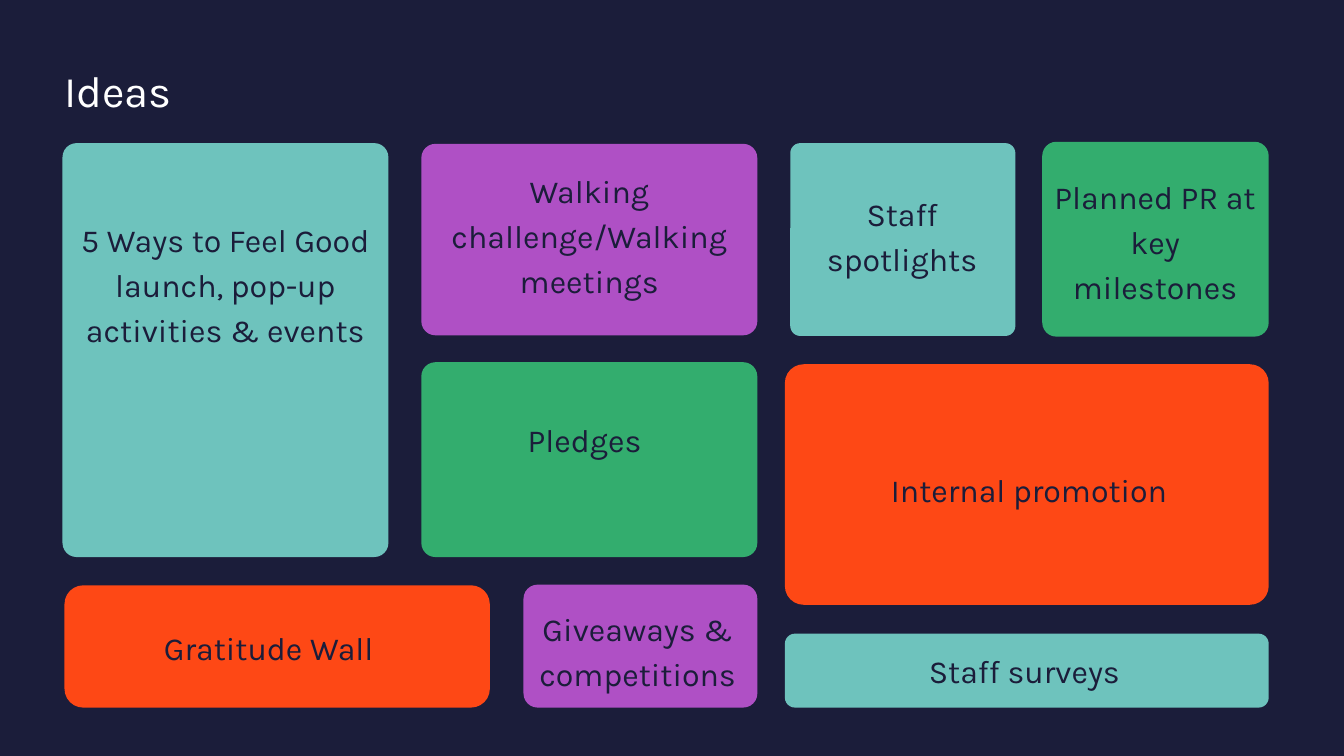
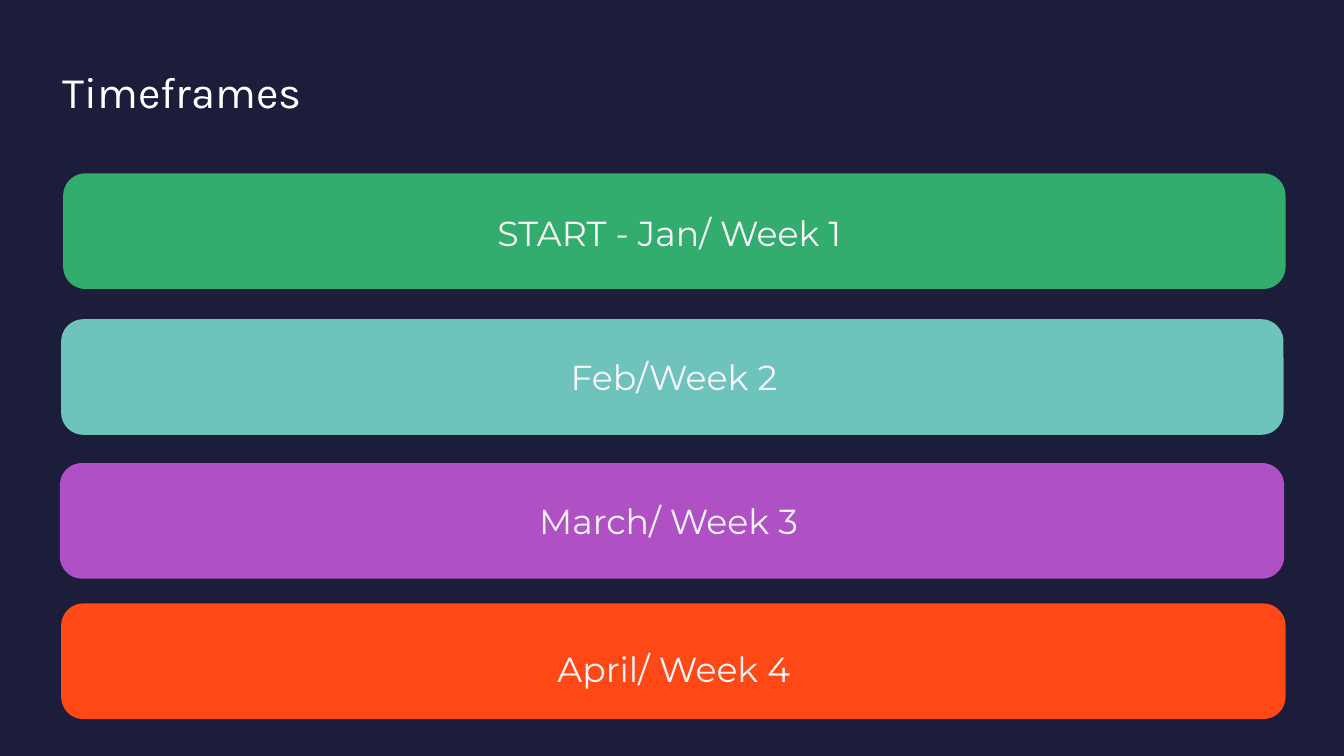
from pptx import Presentation
from pptx.dml.color import RGBColor
from pptx.enum.shapes import MSO_SHAPE
from pptx.enum.text import MSO_ANCHOR, PP_ALIGN
from pptx.util import Inches, Pt

NAVY = RGBColor(0x1B, 0x1D, 0x3A)
WHITE = RGBColor(0xFF, 0xFF, 0xFF)
PALE = RGBColor(0xF8, 0xF5, 0xFB)
ORANGE = RGBColor(0xFE, 0x48, 0x15)
TEAL = RGBColor(0x6E, 0xC3, 0xBD)
GREEN = RGBColor(0x33, 0xAD, 0x6E)
PURPLE = RGBColor(0xAF, 0x50, 0xC5)

TITLE = dict(font="Karla", size=46.8, leading=65.5, color=WHITE)
IDEA = dict(font="Karla", size=34.4, leading=48.2, color=NAVY, align=PP_ALIGN.CENTER)
PERIOD = dict(font="Montserrat", size=37.2, leading=52.1, color=PALE, align=PP_ALIGN.CENTER)

# Text, colour, corner radius, card area, label area (left, top, width, height)
IDEAS = [
    ("Gratitude Wall", ORANGE, 0.28, (0.96, 8.71, 6.33, 1.82), (1.31, 9.25, 5.38, 0.61)),
    ("5 Ways to Feel Good launch, pop-up activities & events", TEAL, 0.21,
     (0.93, 2.13, 4.85, 6.16), (1.19, 3.19, 4.33, 2.64)),
    ("Staff spotlights", TEAL, 0.15, (11.76, 2.13, 3.35, 2.87), (12.01, 2.8, 2.83, 1.3)),
    ("Pledges", GREEN, 0.21, (6.27, 5.39, 5, 2.9), (6.49, 6.16, 4.42, 0.62)),
    ("Walking challenge/Walking meetings", PURPLE, 0.21,
     (6.27, 2.14, 5, 2.85), (6.4, 2.46, 4.74, 1.97)),
    ("Internal promotion", ORANGE, 0.28, (11.68, 5.42, 7.2, 3.58), (12.19, 6.91, 6.25, 0.62)),
    ("Giveaways & competitions", PURPLE, 0.21, (7.79, 8.7, 3.48, 1.83), (7.75, 8.98, 3.48, 1.3)),
    ("Planned PR at key milestones", GREEN, 0.21,
     (15.51, 2.11, 3.37, 2.9), (15.67, 2.54, 3.04, 1.98)),
    ("Staff surveys", TEAL, 0.15, (11.68, 9.43, 7.2, 1.1), (12.05, 9.6, 6.39, 0.61)),
]

# Text, colour, bar left, bar top, bar width, label centre, label top
PERIODS = [
    ("START - Jan/ Week 1", GREEN, 0.94, 2.58, 18.19, 9.96, 3.05),
    ("Feb/Week 2", TEAL, 0.91, 4.75, 18.19, 10.03, 5.19),
    ("March/ Week 3", PURPLE, 0.89, 6.89, 18.22, 9.95, 7.33),
    ("April/ Week 4", ORANGE, 0.91, 8.98, 18.22, 10.03, 9.53),
]
BAR_HEIGHT = 1.72
BAR_RADIUS = 0.33
LABEL_WIDTH = 17


def write(frame, text, *, font, size, leading, color, align=PP_ALIGN.LEFT):
    frame.word_wrap = True
    frame.vertical_anchor = MSO_ANCHOR.TOP
    frame.margin_left = frame.margin_right = frame.margin_top = frame.margin_bottom = 0
    para = frame.paragraphs[0]
    para.alignment = align
    para.line_spacing = Pt(leading)
    span = para.add_run()
    span.text = text
    span.font.name = font
    span.font.size = Pt(size)
    span.font.color.rgb = color


class Board:
    def __init__(self):
        self.deck = Presentation()
        self.deck.slide_width = Inches(20)
        self.deck.slide_height = Inches(11.25)
        self.page = None

    def new_page(self, title, left, top):
        self.page = self.deck.slides.add_slide(self.deck.slide_layouts[6])
        self.page.background.fill.solid()
        self.page.background.fill.fore_color.rgb = NAVY
        self.label(title, (left, top, 18, 0.87), TITLE)

    def label(self, text, area, style):
        box = self.page.shapes.add_textbox(*map(Inches, area))
        write(box.text_frame, text, **style)

    def card(self, area, color, radius):
        card = self.page.shapes.add_shape(MSO_SHAPE.ROUNDED_RECTANGLE, *map(Inches, area))
        card.adjustments[0] = radius / min(area[2:])
        card.fill.solid()
        card.fill.fore_color.rgb = color
        card.line.fill.background()
        card.shadow.inherit = False


def add_ideas(board):
    board.new_page("Ideas", 0.96, 0.82)
    for text, color, radius, card_area, label_area in IDEAS:
        board.card(card_area, color, radius)
        board.label(text, label_area, IDEA)


def add_timeframes(board):
    board.new_page("Timeframes", 0.93, 0.83)
    for text, color, left, top, width, centre, label_top in PERIODS:
        board.card((left, top, width, BAR_HEIGHT), color, BAR_RADIUS)
        board.label(text, (centre - LABEL_WIDTH / 2, label_top, LABEL_WIDTH, 0.7), PERIOD)


def main():
    board = Board()
    add_ideas(board)
    add_timeframes(board)
    board.deck.save("out.pptx")


if __name__ == "__main__":
    main()
